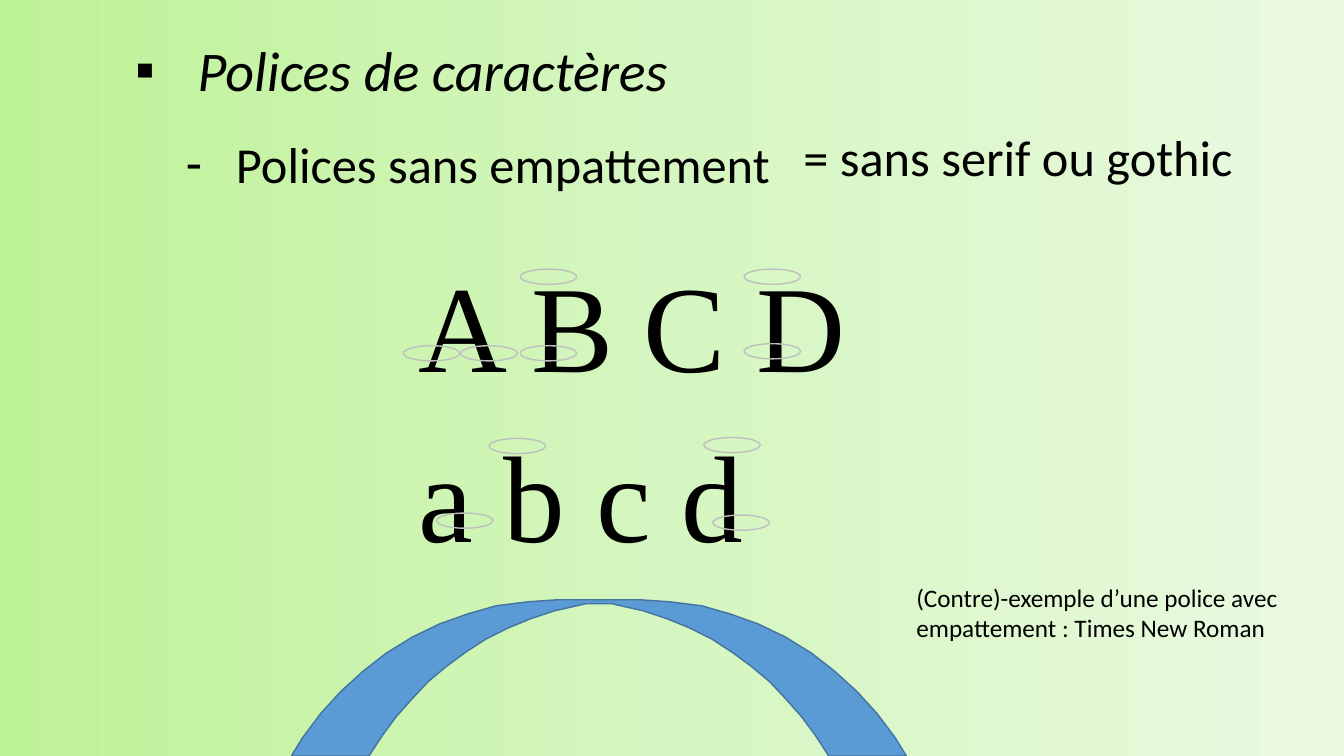
from copy import deepcopy

from lxml import etree
from pptx import Presentation
from pptx.dml.color import RGBColor
from pptx.enum.shapes import MSO_SHAPE as SHAPE
from pptx.enum.text import MSO_ANCHOR as ANCHOR, MSO_AUTO_SIZE as FIT, PP_ALIGN as ALIGN
from pptx.oxml.ns import qn
from pptx.util import Inches, Pt

BLACK = RGBColor(0, 0, 0)
GRAY = RGBColor(0xBF, 0xBF, 0xBF)
BLUE = RGBColor(0x5B, 0x9B, 0xD5)
DARK_BLUE = RGBColor(0x43, 0x73, 0x9E)
GREENS = [RGBColor(0xBE, 0xF2, 0x97), RGBColor(0xD5, 0xF6, 0xC0), RGBColor(0xEA, 0xFA, 0xE0)]

SERIF_RINGS = [
    (4, 3.43), (4.57, 3.43), (5.16, 2.67), (5.16, 3.43), (7.38, 2.67),
    (7.38, 3.41), (4.85, 4.35), (6.98, 4.34), (7.07, 5.11), (4.33, 5.09),
]
ARCH_CENTER = 5.94
ARCH_OUTER = [
    (0.41, 5.95), (0.7, 5.97), (1.02, 6.01), (1.3, 6.09), (1.58, 6.19), (1.85, 6.32),
    (2.11, 6.48), (2.34, 6.66), (2.56, 6.86), (2.76, 7.08), (2.94, 7.32), (3.05, 7.5),
]
ARCH_INNER = [
    (2.28, 7.5), (2.15, 7.3), (2.01, 7.11), (1.85, 6.93), (1.69, 6.76), (1.51, 6.61),
    (1.32, 6.47), (1.12, 6.34), (0.9, 6.23), (0.68, 6.14), (0.44, 6.06), (0.13, 5.99),
]


class SlideBuilder:
    font = "Calibri"
    color = BLACK

    def __init__(self, prs):
        self.slide = prs.slides.add_slide(prs.slide_layouts[5])
        self.shapes = self.slide.shapes

    def background(self, w, h, colors):
        sp = self.shapes.add_shape(SHAPE.RECTANGLE, 0, 0, w, h)
        sp.shadow.inherit = False
        sp.line.fill.background()
        sp.fill.gradient()
        sp.fill.gradient_angle = 0
        first = sp.fill.gradient_stops[0]._gs
        first.addnext(deepcopy(first))
        for i, (stop, color) in enumerate(zip(sp.fill.gradient_stops, colors)):
            stop.color.rgb = color
            stop.position = i / (len(colors) - 1)
        self.shapes._spTree.remove(sp._element)
        self.shapes._spTree.insert(2, sp._element)

    def outline(self, sp, color):
        sp.shadow.inherit = False
        sp.line.color.rgb = color
        sp.line.width = Pt(1)

    def ring(self, x, y):
        sp = self.shapes.add_shape(SHAPE.OVAL, Inches(x), Inches(y), Inches(0.56), Inches(0.15))
        sp.fill.background()
        self.outline(sp, GRAY)

    def arch(self, center, outer, inner):
        right = [(center + dx, y) for dx, y in outer + inner]
        left = [(center - dx, y) for dx, y in reversed(outer + inner)]
        points = [(Inches(x), Inches(y)) for x, y in right + left]
        fb = self.shapes.build_freeform(*points[0])
        fb.add_line_segments(points[1:], close=True)
        sp = fb.convert_to_shape()
        sp.fill.solid()
        sp.fill.fore_color.rgb = BLUE
        self.outline(sp, DARK_BLUE)

    def title(self, box, paragraphs):
        self.fill_text(self.shapes.title, box, paragraphs)

    def text(self, box, paragraphs):
        self.fill_text(self.shapes.add_textbox(0, 0, 0, 0), box, paragraphs)

    def fill_text(self, sp, box, paragraphs):
        for name, value in zip(("left", "top", "width", "height"), box):
            setattr(sp, name, Inches(value))
        tf = sp.text_frame
        frame = {"word_wrap": True, "auto_size": FIT.NONE, "vertical_anchor": ANCHOR.TOP}
        for name, value in frame.items():
            setattr(tf, name, value)
        for i, (text, font, layout, bullet) in enumerate(paragraphs):
            p = tf.add_paragraph() if i else tf.paragraphs[0]
            for name, value in {"alignment": ALIGN.LEFT, **layout}.items():
                setattr(p, name, value)
            r = p.add_run()
            r.text = text
            for name, value in {"name": self.font, **font}.items():
                setattr(r.font, name, value)
            r.font.color.rgb = self.color
            if bullet:
                self.bullet(p, *bullet)

    def bullet(self, p, char, margin, indent):
        pPr = p._p.get_or_add_pPr()
        pPr.set("marL", str(Inches(margin)))
        pPr.set("indent", str(Inches(indent)))
        if char:
            etree.SubElement(pPr, qn("a:buFont")).set("typeface", "Arial")
            etree.SubElement(pPr, qn("a:buChar")).set("char", char)


def main():
    prs = Presentation()
    prs.slide_width, prs.slide_height = Inches(13.33), Inches(7.5)
    s = SlideBuilder(prs)
    s.background(prs.slide_width, prs.slide_height, GREENS)
    s.title((1.24, 0.3, 11.52, 2.15), [
        ("Polices de caractères", {"size": Pt(40), "italic": True}, {}, ("▪", 0.62, -0.62)),
        ("Polices sans empattement", {"size": Pt(36), "italic": False},
         {"level": 1, "line_spacing": 1.5}, ("-", 1, -0.5)),
    ])
    s.arch(ARCH_CENTER, ARCH_OUTER, ARCH_INNER)
    letters = {"size": Pt(88), "name": "Times New Roman"}
    spacing = {"alignment": ALIGN.JUSTIFY, "line_spacing": 1.15}
    s.text((3.85, 2.21, 6.13, 3.87), [
        (line, letters, spacing, ("", 0, 0.2)) for line in ("A B C D", "a b c d")
    ])
    for x, y in SERIF_RINGS:
        s.ring(x, y)
    s.text((8.99, 5.73, 4.08, 0.71), [
        ("(Contre)-exemple d’une police avec empattement\u00a0: Times New Roman",
         {"size": Pt(18)}, {}, None),
    ])
    s.text((7.87, 1.2, 4.77, 0.71), [("= sans serif ou gothic", {"size": Pt(36)}, {}, None)])
    prs.save("out.pptx")


if __name__ == "__main__":
    main()
